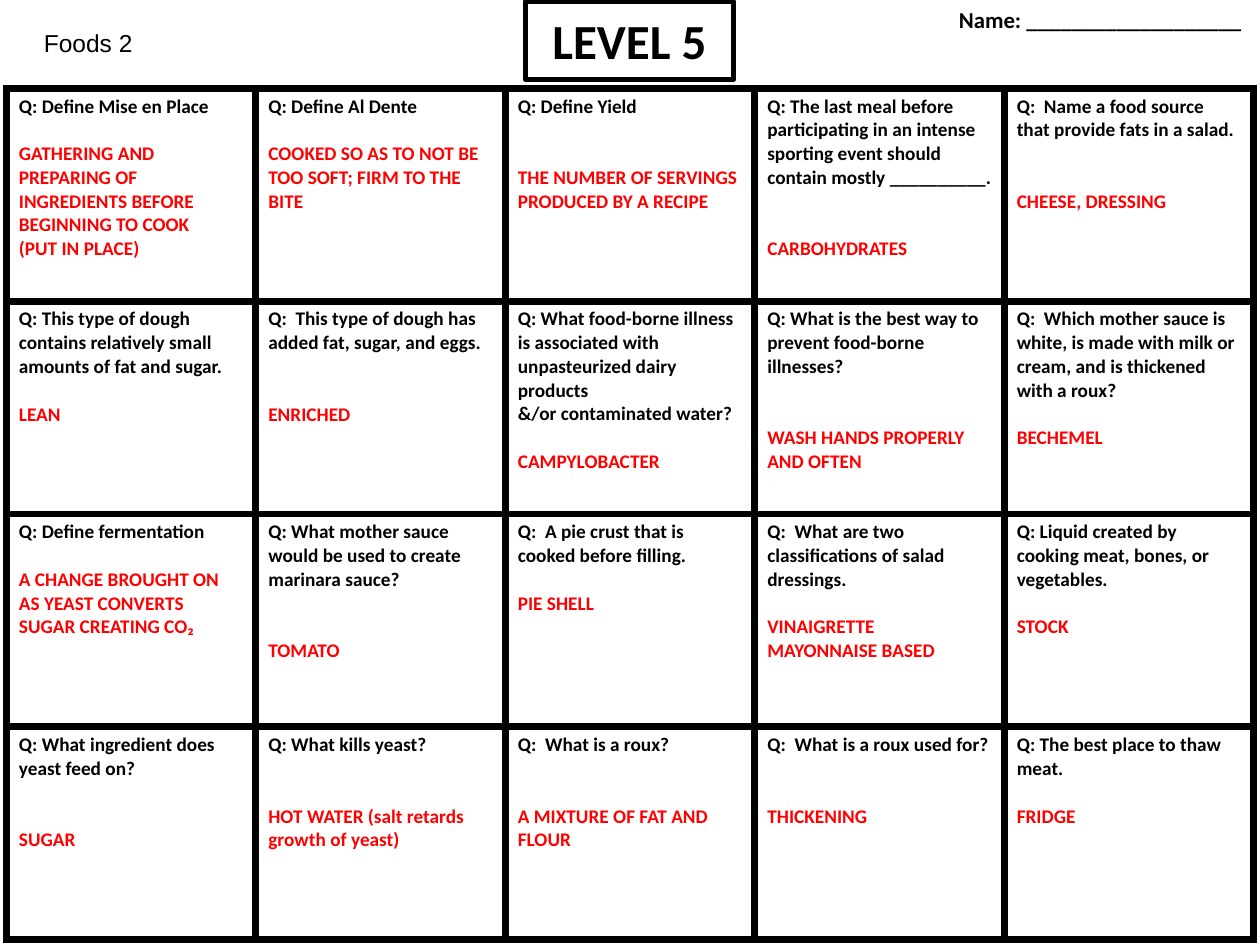
from lxml.etree import SubElement
from pptx import Presentation
from pptx.dml.color import RGBColor
from pptx.enum.text import MSO_ANCHOR, MSO_AUTO_SIZE, PP_ALIGN
from pptx.oxml.ns import qn
from pptx.util import Pt

PX = 9144  # EMU per px, 100 px to the inch

THEME = {
    "ink": RGBColor(0, 0, 0),
    "answer": RGBColor(255, 0, 0),
    "paper": RGBColor(255, 255, 255),
    "body_font": "Calibri",
    "course_font": "Arial",
    "title": Pt(28),
    "course": Pt(14),
    "name": Pt(13),
    "cell": Pt(11),
    "blank_line": 13.6,
    "title_line": Pt(3),
    "grid_line": Pt(4.5),
}

# Each cell: question, lines left free, answer
QUESTIONS = [
    [
        ("Q: Define Mise en Place", 1,
         "GATHERING AND PREPARING OF INGREDIENTS BEFORE BEGINNING TO COOK\n(PUT IN PLACE)"),
        ("Q: Define Al Dente", 1, "COOKED SO AS TO NOT BE TOO SOFT; FIRM TO THE BITE"),
        ("Q: Define Yield", 2, "THE NUMBER OF SERVINGS PRODUCED BY A RECIPE"),
        ("Q: The last meal before participating in an intense sporting event "
         "should contain mostly __________.", 2, "CARBOHYDRATES"),
        ("Q:  Name a food source that provide fats in a salad.", 2, "CHEESE, DRESSING"),
    ],
    [
        ("Q: This type of dough contains relatively small amounts of fat and sugar.", 1, "LEAN"),
        ("Q:  This type of dough has added fat, sugar, and eggs.", 2, "ENRICHED"),
        ("Q: What food-borne illness is associated with unpasteurized dairy products\n"
         "&/or contaminated water?", 1, "CAMPYLOBACTER"),
        ("Q: What is the best way to prevent food-borne illnesses?", 2,
         "WASH HANDS PROPERLY AND OFTEN"),
        ("Q:  Which mother sauce is white, is made with milk or cream, "
         "and is thickened with a roux?", 1, "BECHEMEL"),
    ],
    [
        ("Q: Define fermentation", 1,
         "A CHANGE BROUGHT ON AS YEAST CONVERTS SUGAR CREATING CO₂"),
        ("Q: What mother sauce would be used to create marinara sauce?", 2, "TOMATO"),
        ("Q:  A pie crust that is cooked before filling.", 1, "PIE SHELL"),
        ("Q:  What are two classifications of salad dressings.", 1,
         "VINAIGRETTE\nMAYONNAISE BASED"),
        ("Q: Liquid created by cooking meat, bones, or vegetables.", 1, "STOCK"),
    ],
    [
        ("Q: What ingredient does yeast feed on?", 2, "SUGAR"),
        ("Q: What kills yeast?", 2, "HOT WATER (salt retards growth of yeast)"),
        ("Q:  What is a roux?", 2, "A MIXTURE OF FAT AND FLOUR"),
        ("Q:  What is a roux used for?", 2, "THICKENING"),
        ("Q: The best place to thaw meat.", 1, "FRIDGE"),
    ],
]


def write(p, text, size, color=THEME["ink"], font=THEME["body_font"], bold=True):
    r = p.add_run()
    r.text = text
    r.font.color.rgb = color
    for key, value in {"name": font, "size": size, "bold": bold}.items():
        setattr(r.font, key, value)


def set_borders(cell):
    """Put a solid grid line on all four sides of a table cell."""
    tc_pr = cell._tc.get_or_add_tcPr()
    for i, side in enumerate(("a:lnL", "a:lnR", "a:lnT", "a:lnB")):
        ln = SubElement(tc_pr, qn(side), w=str(THEME["grid_line"]))
        fill = SubElement(ln, qn("a:solidFill"))
        SubElement(fill, qn("a:srgbClr"), val=str(THEME["ink"]))
        tc_pr.insert(i, ln)


prs = Presentation()
prs.slide_width, prs.slide_height = 1000 * PX, 750 * PX
s = prs.slides.add_slide(prs.slide_layouts[5])

# Heading
title = s.shapes.title
for key, value in {"left": 417, "top": 1, "width": 165, "height": 62}.items():
    setattr(title, key, value * PX)
title.line.color.rgb = THEME["ink"]
title.line.width = THEME["title_line"]
tf = title.text_frame
for key, value in {"auto_size": MSO_AUTO_SIZE.NONE, "word_wrap": True,
                   "vertical_anchor": MSO_ANCHOR.MIDDLE}.items():
    setattr(tf, key, value)
tf.paragraphs[0].alignment = PP_ALIGN.CENTER
write(tf.paragraphs[0], "LEVEL 5", THEME["title"])

# Course and name line
labels = [
    ((25, 17, 167, 34), "Foods 2", PP_ALIGN.LEFT,
     {"size": THEME["course"], "font": THEME["course_font"], "bold": False}),
    ((746, 0, 254, 36), "Name: ___________________", PP_ALIGN.CENTER,
     {"size": THEME["name"]}),
]
for box, text, align, style in labels:
    tf = s.shapes.add_textbox(*(v * PX for v in box)).text_frame
    tf.word_wrap = True
    tf.paragraphs[0].alignment = align
    write(tf.paragraphs[0], text, **style)

# Question grid
n_rows, n_cols = len(QUESTIONS), len(QUESTIONS[0])
col_w, row_h = 198, 169
table = s.shapes.add_table(n_rows, n_cols, 5 * PX, 70 * PX,
                           n_cols * col_w * PX, n_rows * row_h * PX).table
table.first_row = table.horz_banding = False
for row, questions in zip(table.rows, QUESTIONS):
    for cell, (question, gap, answer) in zip(row.cells, questions):
        cell.fill.solid()
        cell.fill.fore_color.rgb = THEME["paper"]
        set_borders(cell)
        tf = cell.text_frame
        p = tf.paragraphs[0]
        for i, line in enumerate(question.split("\n")):
            p = tf.add_paragraph() if i else p
            write(p, line, THEME["cell"])
        for i, line in enumerate(answer.split("\n")):
            p = tf.add_paragraph()
            if i == 0:
                p.space_before = Pt(gap * THEME["blank_line"])
            write(p, line, THEME["cell"], THEME["answer"])

prs.save("out.pptx")
